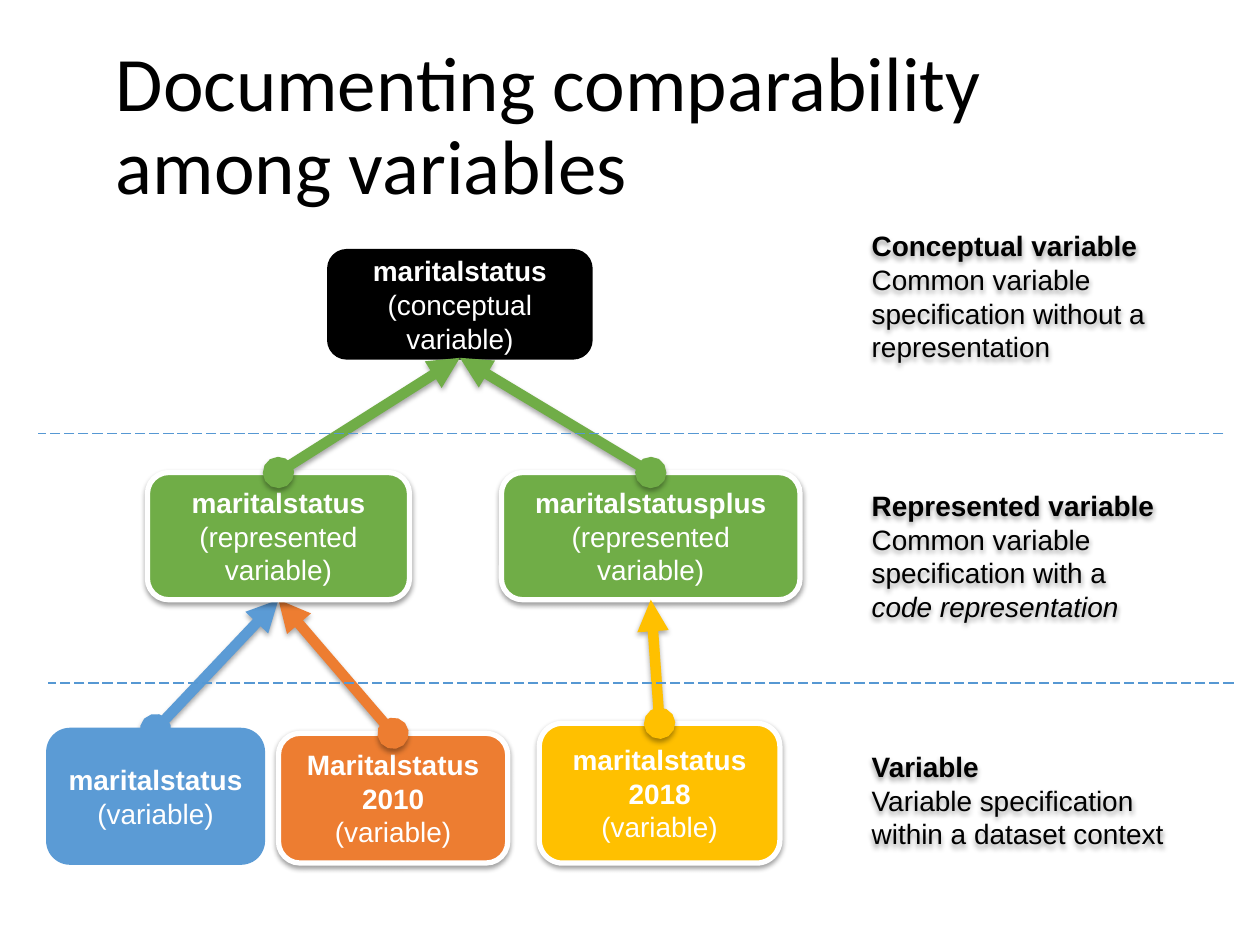
import pptx
import pptx.util
import pptx.dml.color
import pptx.enum.dml
import pptx.enum.shapes
import pptx.enum.text
import pptx.oxml
import pptx.oxml.ns

COLUMNS, ROWS = 100, 75
WIDTH, HEIGHT = pptx.util.Inches(10), pptx.util.Inches(7.5)
ALIGN = pptx.enum.text.PP_ALIGN
BLACK, WHITE, GREEN, BLUE, ORANGE, YELLOW, DIVIDER = (
    "000000", "FFFFFF", "70AD47", "5B9BD5", "ED7D31", "FFC000", "5698D3")
REPRESENTED = ("(represented variable)", "")

# Each text is a list of paragraphs, each a list of lines, each a list of (words, style).
VARIABLES = {
    "concept": ((26.1, 19.9, 20.8, 8.5), BLACK, False,
                [[[("maritalstatus", "b")], [("(conceptual variable)", "")]]]),
    "status": ((11.7, 37.5, 20.8, 10.1), GREEN, True,
               [[[("maritalstatus", "b")], [REPRESENTED]]]),
    "plus": ((39.8, 37.5, 23.7, 10.1), GREEN, True,
             [[[("maritalstatusplus", "b")], [REPRESENTED]]]),
    "base": ((3.8, 57.9, 17.1, 10.6), BLUE, False,
             [[[("maritalstatus", "b")], [("(variable)", "")]]]),
    "2010": ((22.1, 58.2, 18.2, 10.3), ORANGE, True,
             [[[("Maritalstatus", "b")]], [[("2010", "b")], [("(variable)", "")]]]),
    "2018": ((42.8, 57.4, 19.1, 11.1), YELLOW, True,
             [[[("maritalstatus", "b")]], [[("2018", "b")], [("(variable)", "")]]]),
}
STACK = ["concept", "2010", ("2010", "status"), ("base", "status"), "status", "base",
         ("status", "concept"), "2018", "plus", ("2018", "plus"), ("plus", "concept")]
LEVELS = [
    (17.4, [[[("Conceptual variable", "b")],
             [("Common variable specification without a representation", "")]]]),
    (38, [[[("Represented variable", "b")]],
          [[("Common variable specification with a ", ""), ("code representation", "i")]]]),
    (57.4, [[[("Variable", "b")]],
            [[("Variable specification within a dataset context", "")]]]),
]
DIVIDERS = [(97.1, 3, 34.4), (97.9, 3.8, 54.2)]


def grid(*lengths):
    """Turn alternating column and row counts into slide lengths."""
    return [round(n * (HEIGHT / ROWS if i % 2 else WIDTH / COLUMNS))
            for i, n in enumerate(lengths)]


def rgb(color):
    """Return the colour of a hex string."""
    return pptx.dml.color.RGBColor.from_string(color)


def set_effects(part, opacity=0, distance=1.6):
    """Give a part a soft drop shadow, or none when opacity is zero."""
    shadow = (f'<a:outerShdw blurRad="{round(3.1 * 12700)}" dist="{round(distance * 12700)}" '
              'dir="5400000" algn="ctr" rotWithShape="0"><a:srgbClr val="000000">'
              f'<a:alpha val="{opacity * 1000}"/></a:srgbClr></a:outerShdw>') if opacity else ""
    part._element.spPr.append(pptx.oxml.parse_xml(
        f'<a:effectLst {pptx.oxml.ns.nsdecls("a")}>{shadow}</a:effectLst>'))


def write(frame, paragraphs, color, size=16, font="Arial", align=ALIGN.LEFT):
    """Fill a middle-anchored text frame with styled paragraphs."""
    frame.word_wrap = True
    frame.vertical_anchor = pptx.enum.text.MSO_ANCHOR.MIDDLE
    for index, lines in enumerate(paragraphs):
        paragraph = frame.add_paragraph() if index else frame.paragraphs[0]
        paragraph.alignment = align
        paragraph.font.size, paragraph.font.name = pptx.util.Pt(size), font
        paragraph.font.color.rgb = rgb(color)
        for number, line in enumerate(lines):
            if number:
                paragraph.add_line_break()
            for words, style in line:
                run = paragraph.add_run()
                run.text = words
                run.font.bold, run.font.italic = style == "b", style == "i"


def add_title(slide, box):
    """Place the slide title."""
    frame = slide.shapes.add_textbox(*grid(*box)).text_frame
    write(frame, [[[("Documenting comparability among variables", "")]]], BLACK, 44, "Calibri")
    frame.paragraphs[0].line_spacing = 0.9


def add_variable(slide, box, color, raised, paragraphs):
    """Place one variable box, raised ones with a white rim and a shadow."""
    variable = slide.shapes.add_shape(
        pptx.enum.shapes.MSO_SHAPE.ROUNDED_RECTANGLE, *grid(*box))
    variable.fill.solid()
    variable.fill.fore_color.rgb = rgb(color)
    variable.line.color.rgb = rgb(WHITE if raised else color)
    variable.line.width = pptx.util.Pt(3 if raised else 2)
    set_effects(variable, 38 if raised else 0)
    write(variable.text_frame, paragraphs, WHITE, align=ALIGN.CENTER)


def add_line(slide, ends, color, width):
    """Place a straight line between two grid points."""
    line = slide.shapes.add_connector(
        pptx.enum.shapes.MSO_CONNECTOR.STRAIGHT, *grid(*ends))
    line.line.color.rgb = rgb(color)
    line.line.width = pptx.util.Pt(width)
    return line


def add_link(slide, child, parent):
    """Join the top of a child variable to the bottom of its parent."""
    (left, top, width, _), color = VARIABLES[child][:2]
    x, y, across, down = VARIABLES[parent][0]
    link = add_line(slide, (left + width / 2, top, x + across / 2, y + down), color, 6)
    for end, kind in (("headEnd", "oval"), ("tailEnd", "triangle")):
        link.line._get_or_add_ln().append(pptx.oxml.parse_xml(
            f'<a:{end} {pptx.oxml.ns.nsdecls("a")} type="{kind}"/>'))
    set_effects(link, 35, 1.8)


def add_divider(slide, start, end, row):
    """Place a dashed line between two levels."""
    divider = add_line(slide, (start, row, end, row), DIVIDER, 0.75)
    divider.line.dash_style = pptx.enum.dml.MSO_LINE.LONG_DASH
    set_effects(divider)


def add_level(slide, box, paragraphs):
    """Place the description of one level."""
    level = slide.shapes.add_textbox(*grid(*box))
    write(level.text_frame, paragraphs, BLACK)
    set_effects(level, 38)


def main():
    """Build and save the slide."""
    deck = pptx.Presentation()
    deck.slide_width, deck.slide_height = WIDTH, HEIGHT
    slide = deck.slides.add_slide(deck.slide_layouts[6])
    add_title(slide, (8.2, 2.9, 88.9, 14.5))
    for entry in STACK:
        if entry in VARIABLES:
            add_variable(slide, *VARIABLES[entry])
        else:
            add_link(slide, *entry)
    for divider in DIVIDERS:
        add_divider(slide, *divider)
    for row, paragraphs in LEVELS:
        add_level(slide, (68.2, row, 25.9, 12.2), paragraphs)
    deck.save("out.pptx")


if __name__ == "__main__":
    main()
